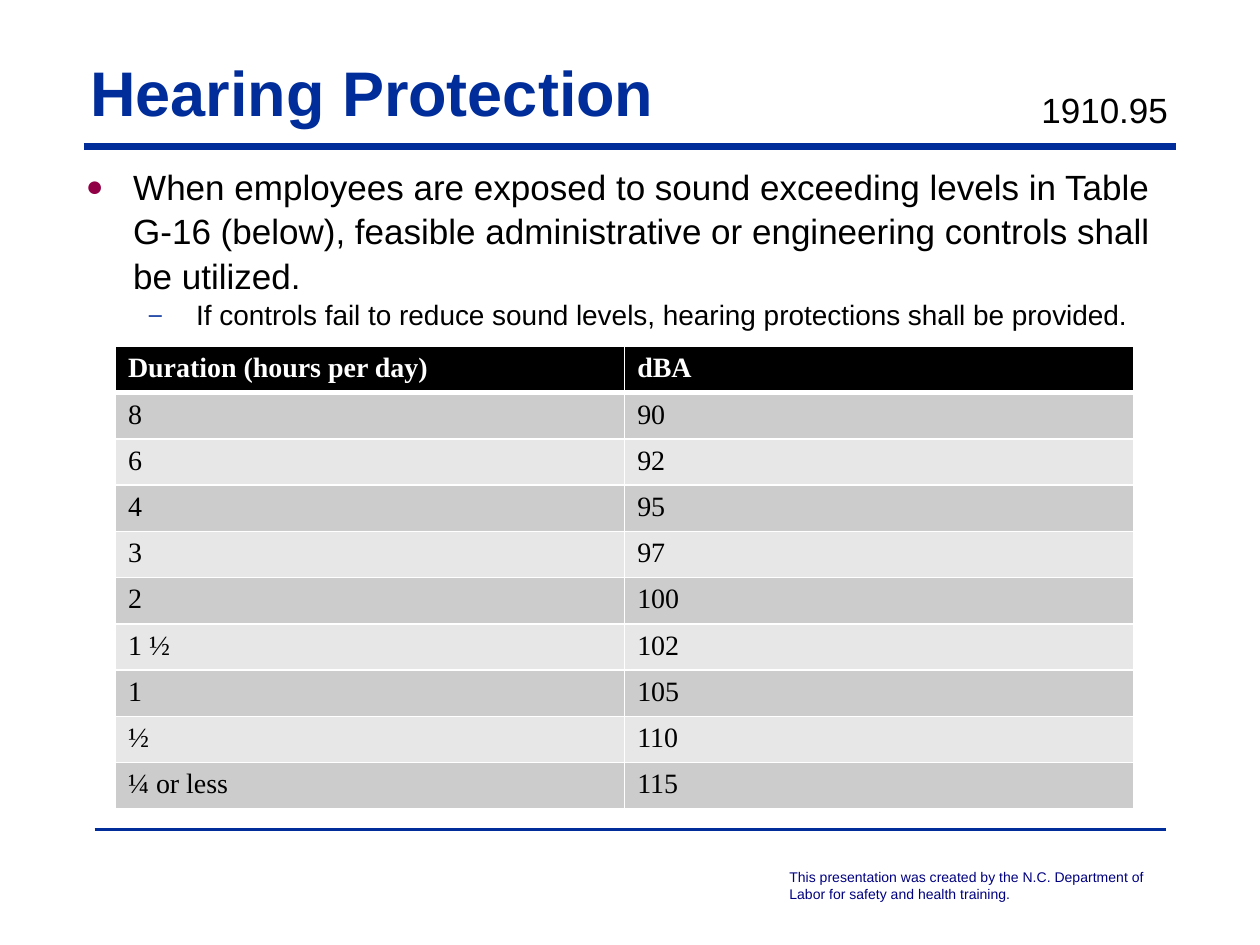
from dataclasses import dataclass

from lxml import etree
from pptx import Presentation
from pptx.dml.color import RGBColor
from pptx.enum.shapes import MSO_CONNECTOR
from pptx.enum.text import MSO_ANCHOR, MSO_AUTO_SIZE, PP_ALIGN
from pptx.oxml.ns import qn
from pptx.util import Pt

STRAIGHT = MSO_CONNECTOR.STRAIGHT
MIDDLE = MSO_ANCHOR.MIDDLE
NO_FIT = MSO_AUTO_SIZE.NONE
LEFT = PP_ALIGN.LEFT
TITLE_ONLY = 5


@dataclass(frozen=True)
class Theme:
    sans: str = "Arial"
    serif: str = "Times New Roman"
    blue: str = "012D9A"
    navy: str = "000080"
    maroon: str = "910046"
    black: str = "000000"
    white: str = "FFFFFF"
    bands: tuple = ("CCCCCC", "E7E7E7")
    title_size: int = 36
    body_size: int = 20
    detail_size: int = 16
    credit_size: int = 8


class SlideBuilder:
    def __init__(self, deck, theme):
        self.theme = theme
        self.slide = deck.slides.add_slide(deck.slide_layouts[TITLE_ONLY])

    def style(self, para, size, color, face=None, bold=False):
        para.alignment = LEFT
        para.font.name = face or self.theme.sans
        para.font.size = Pt(size)
        para.font.bold = bold
        para.font.color.rgb = RGBColor.from_string(color)

    def rule(self, left, right, y, width):
        line = self.slide.shapes.add_connector(STRAIGHT, Pt(left), Pt(y), Pt(right), Pt(y))
        line.line.color.rgb = RGBColor.from_string(self.theme.blue)
        line.line.width = Pt(width)
        etree.SubElement(line._element.spPr, qn("a:effectLst"))

    def title(self, text, left, top, width, height):
        box = self.slide.shapes.title
        box.left, box.top, box.width, box.height = map(Pt, (left, top, width, height))
        frame = box.text_frame
        frame.text = text
        frame.auto_size = NO_FIT
        frame.vertical_anchor = MIDDLE
        frame.margin_left = frame.margin_right = Pt(3.6)
        frame.margin_top = frame.margin_bottom = 0
        self.style(frame.paragraphs[0], self.theme.title_size, self.theme.blue, bold=True)

    def text(self, lines, left, top, width, height, size, color):
        box = self.slide.shapes.add_textbox(*map(Pt, (left, top, width, height)))
        frame = box.text_frame
        frame.word_wrap = True
        frame.text = "\n".join(lines)
        for para in frame.paragraphs:
            self.style(para, size, color)
        return frame

    def bullets(self, items, left, top, width, height):
        box = self.slide.shapes.add_textbox(*map(Pt, (left, top, width, height)))
        frame = box.text_frame
        frame.word_wrap = True
        frame.text = "\n".join(item[0] for item in items)
        for para, (_, level, mark, mark_color, margin, size) in zip(frame.paragraphs, items):
            para.level = level
            self.bullet(para, mark, mark_color, margin)
            para.line_spacing = 1.05
            self.style(para, size, self.theme.black)

    def bullet(self, para, mark, color, margin):
        properties = para._p.get_or_add_pPr()
        properties.set("marL", str(Pt(margin)))
        properties.set("indent", str(Pt(-27)))
        mark_color = etree.SubElement(properties, qn("a:buClr"))
        etree.SubElement(mark_color, qn("a:srgbClr"), val=color)
        etree.SubElement(properties, qn("a:buSzPct"), val="84000")
        etree.SubElement(properties, qn("a:buFont"), typeface=self.theme.sans)
        etree.SubElement(properties, qn("a:buChar"), char=mark)

    def table(self, rows, left, top, width, row_height):
        frame = self.slide.shapes.add_table(
            len(rows), len(rows[0]), Pt(left), Pt(top), Pt(width), Pt(row_height * len(rows))
        )
        for row_index, row in enumerate(rows):
            header = row_index == 0
            fill = self.theme.black if header else self.theme.bands[(row_index - 1) % 2]
            color = self.theme.white if header else self.theme.black
            for column_index, text in enumerate(row):
                cell = frame.table.cell(row_index, column_index)
                cell.text = text
                self.borders(cell, top=3 if row_index == 1 else 1, bottom=3 if header else 1)
                cell.fill.solid()
                cell.fill.fore_color.rgb = RGBColor.from_string(fill)
                para = cell.text_frame.paragraphs[0]
                self.style(para, self.theme.detail_size, color, self.theme.serif, header)

    def borders(self, cell, top, bottom):
        properties = cell._tc.get_or_add_tcPr()
        for side, width in (("L", 1), ("R", 1), ("T", top), ("B", bottom)):
            line = etree.SubElement(properties, qn(f"a:ln{side}"), w=str(Pt(width)))
            fill = etree.SubElement(line, qn("a:solidFill"))
            etree.SubElement(fill, qn("a:srgbClr"), val=self.theme.white)


def main():
    theme = Theme()
    deck = Presentation()
    deck.slide_width, deck.slide_height = Pt(720), Pt(540)
    page = SlideBuilder(deck, theme)

    page.rule(48, 672, 84, 4)
    page.rule(54, 666, 474, 2)
    page.text(
        [
            "This presentation was created by the N.C. Department of",
            "Labor for safety and health training.",
        ],
        444, 493, 222, 27, theme.credit_size, theme.navy,
    )
    page.title("Hearing Protection", 48, 30, 648, 44)
    page.text(["1910.95"], 588, 47, 102, 32, theme.body_size, theme.black)
    page.bullets(
        [
            (
                "When employees are exposed to sound exceeding levels in Table G-16 (below), "
                "feasible administrative or engineering controls shall be utilized.",
                0, "●", theme.maroon, 27, theme.body_size,
            ),
            (
                "If controls fail to reduce sound levels, hearing protections shall be provided.",
                1, "–", theme.blue, 63, theme.detail_size,
            ),
        ],
        42, 90, 624, 99,
    )
    page.table(
        [
            ("Duration (hours per day)", "dBA"),
            ("8", "90"),
            ("6", "92"),
            ("4", "95"),
            ("3", "97"),
            ("2", "100"),
            ("1 ½", "102"),
            ("1", "105"),
            ("½", "110"),
            ("¼ or less", "115"),
        ],
        66, 198, 582, 26.4,
    )
    deck.save("out.pptx")


if __name__ == "__main__":
    main()
